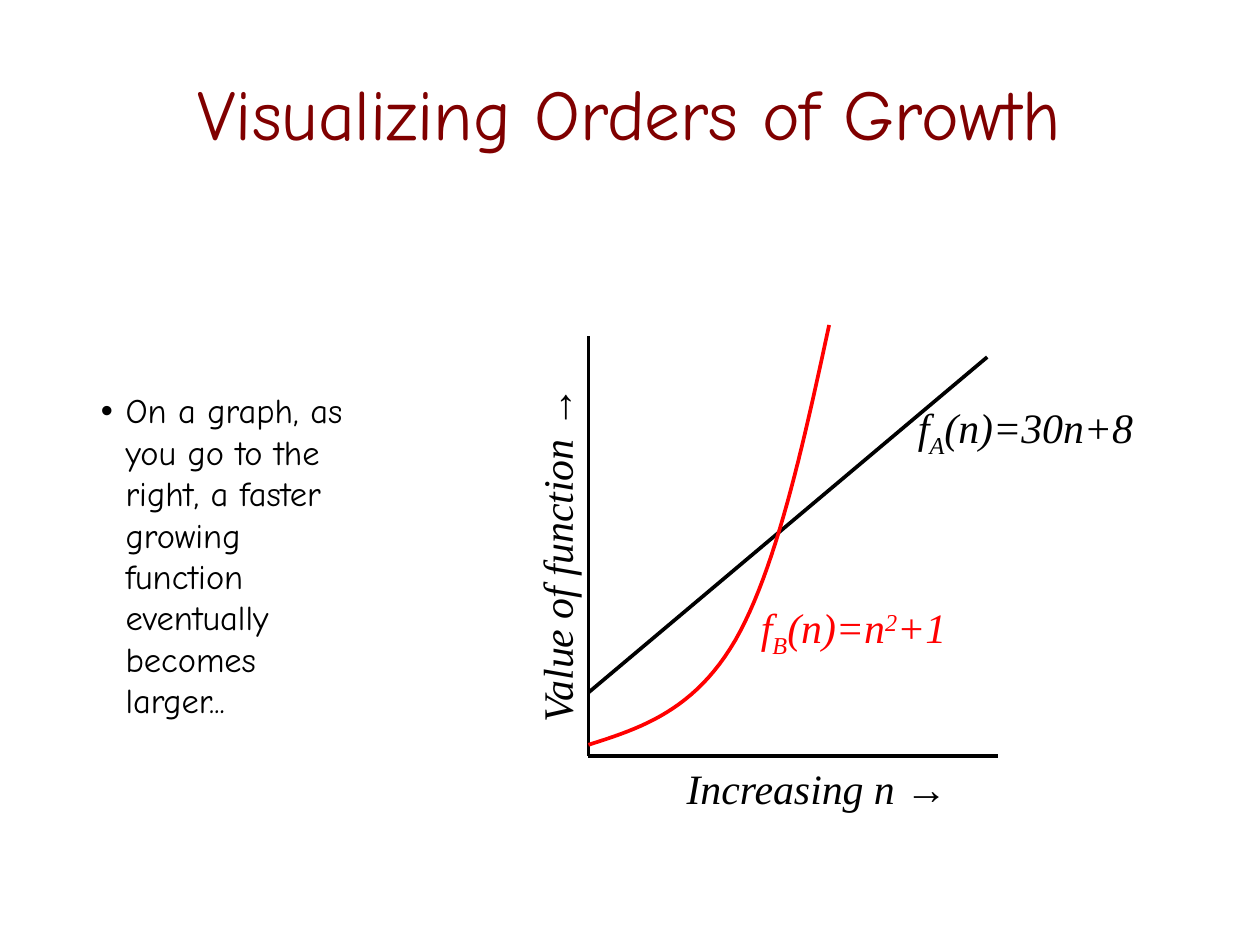
from copy import deepcopy

from pptx import Presentation
from pptx.dml.color import RGBColor
from pptx.enum.shapes import MSO_CONNECTOR as Connector
from pptx.enum.text import MSO_ANCHOR as Anchor, MSO_AUTO_SIZE as AutoSize, PP_ALIGN as Align
from pptx.oxml import parse_xml
from pptx.oxml.ns import nsdecls
from pptx.util import Cm, Pt

BLACK, RED, MAROON = "000000", "FF0000", "800000"
TITLE_FORMAT = {"name": "Comic Neue", "size": Pt(58)}
BODY_FORMAT = {"name": "Comic Neue", "size": Pt(28)}
LABEL_FORMAT = {"name": "Times New Roman", "size": Pt(34), "italic": True}
BODY_TEXT = ("On a graph, as\vyou go to the\vright, a faster\vgrowing\v"
             "function\veventually\vbecomes\vlarger...")


def color(hex_string):
    """Turn a hex string into a colour."""
    return RGBColor.from_string(hex_string)


def set_attributes(target, values):
    """Set each named attribute of the target."""
    for name, value in values.items():
        setattr(target, name, value)


def format_run(run, values, hex_string):
    """Apply font values and a colour to a run."""
    set_attributes(run.font, values)
    run.font.color.rgb = color(hex_string)


def place(shape, left, top, width, height):
    """Move and size a shape, in centimetres."""
    set_attributes(shape, {"left": Cm(left), "top": Cm(top),
                           "width": Cm(width), "height": Cm(height)})


def format_frame(frame, horizontal, vertical, auto_size=AutoSize.NONE):
    """Set margins, wrapping and anchor of a text frame."""
    set_attributes(frame, {
        "margin_left": Cm(horizontal), "margin_right": Cm(horizontal),
        "margin_top": Cm(vertical), "margin_bottom": Cm(vertical),
        "word_wrap": True, "auto_size": auto_size, "vertical_anchor": Anchor.MIDDLE})


def add_title(slide, box):
    """Fill the title placeholder."""
    title = slide.shapes.title
    place(title, *box)
    format_frame(title.text_frame, 0.15, 0.15)
    paragraph = title.text_frame.paragraphs[0]
    paragraph.text = "Visualizing Orders of Growth"
    paragraph.alignment = Align.CENTER
    format_run(paragraph.runs[0], TITLE_FORMAT, MAROON)


def add_body(slide, box):
    """Fill the body placeholder with one bulleted paragraph."""
    body = slide.placeholders[1]
    place(body, *box)
    format_frame(body.text_frame, 0.15, 0.15)
    paragraph = body.text_frame.paragraphs[0]
    paragraph.text = BODY_TEXT
    properties = paragraph._p.get_or_add_pPr()
    properties.set("marL", str(Cm(0.71)))
    properties.set("indent", str(-Cm(0.71)))
    for bullet in (f'<a:buClr {nsdecls("a")}><a:srgbClr val="{BLACK}"/></a:buClr>',
                   f'<a:buChar {nsdecls("a")} char="•"/>'):
        properties.append(parse_xml(bullet))
    paragraph.space_before = Pt(0)
    for run in paragraph.runs:
        format_run(run, BODY_FORMAT, BLACK)
    for line_break in paragraph._p.br_lst:
        line_break.append(deepcopy(paragraph.runs[0].font._element))


def add_line(slide, start, end):
    """Draw a straight black line between two points."""
    line = slide.shapes.add_connector(Connector.STRAIGHT, *map(Cm, start + end))
    line.line.color.rgb = color(BLACK)
    line.line.width = Pt(3)
    line._element.spPr.append(parse_xml(f'<a:effectLst {nsdecls("a")}/>'))


def bezier_points(start, first, second, end, steps=24):
    """Return points along a cubic curve, without its start."""
    points = []
    for step in range(1, steps + 1):
        t = step / steps
        weights = ((1 - t) ** 3, 3 * t * (1 - t) ** 2, 3 * t ** 2 * (1 - t), t ** 3)
        points.append(tuple(
            Cm(sum(weight * value for weight, value in zip(weights, values)))
            for values in zip(start, first, second, end)))
    return points


def add_curve(slide, knots):
    """Draw a red open curve through joined cubic segments."""
    builder = slide.shapes.build_freeform(*map(Cm, knots[0]))
    for index in range(0, len(knots) - 1, 3):
        builder.add_line_segments(bezier_points(*knots[index:index + 4]), close=False)
    curve = builder.convert_to_shape()
    curve.fill.background()
    curve.line.color.rgb = color(RED)
    curve.line.width = Pt(3)
    curve.shadow.inherit = False


def add_label(slide, box, parts, hex_string=BLACK, rotation=0):
    """Add a centred label from pairs of text and baseline shift."""
    label = slide.shapes.add_textbox(*map(Cm, box))
    label.rotation = rotation
    format_frame(label.text_frame, 0.36, 0.18, AutoSize.SHAPE_TO_FIT_TEXT)
    paragraph = label.text_frame.paragraphs[0]
    paragraph.alignment = Align.CENTER
    for text, baseline in parts:
        run = paragraph.add_run()
        run.text = text
        format_run(run, LABEL_FORMAT, hex_string)
        if baseline:
            run.font._element.set("baseline", str(baseline * 1000))


def add_graph(slide, box):
    """Draw the axes, both functions and their labels."""
    left, top, width, height = box
    bottom = top + height

    def point(right, up):
        """Return the point at a distance from the graph's origin."""
        return left + right, bottom - up

    add_line(slide, point(0, 0), point(0, height))
    add_line(slide, point(0, 0), point(width, 0))
    add_line(slide, point(0, 1.81), point(11.43, 11.43))
    add_curve(slide, [point(*knot) for knot in (
        (0, 0.31), (1.52, 0.79), (3.04, 1.3), (4.21, 3.31),
        (5.36, 5.31), (6.14, 8.82), (6.9, 12.35))])
    add_label(slide, (*point(9.01, 10.24), 7.04, 1.83),
              [("f", 0), ("A", -25), ("(n)=30n+8", 0)])
    add_label(slide, (*point(2.41, 0), 8.28, 1.83), [("Increasing n →", 0)])
    add_label(slide, (*point(4.49, 4.5), 6.22, 1.83),
              [("f", 0), ("B", -25), ("(n)=n", 0), ("2", 30), ("+1", 0)], RED)
    add_label(slide, (*point(-6.15, 6.68), 10.44, 1.83),
              [("Value of function →", 0)], rotation=270)


def main():
    """Build and save the slide."""
    presentation = Presentation()
    set_attributes(presentation, {"slide_width": Cm(36.12), "slide_height": Cm(27.1)})
    slide = presentation.slides.add_slide(presentation.slide_layouts[1])
    add_title(slide, (2.74, 1.63, 30.58, 3.18))
    add_body(slide, (2.74, 7.42, 30.58, 16.99))
    add_graph(slide, (16.87, 9.63, 11.73, 12.04))
    presentation.save("out.pptx")


if __name__ == "__main__":
    main()
